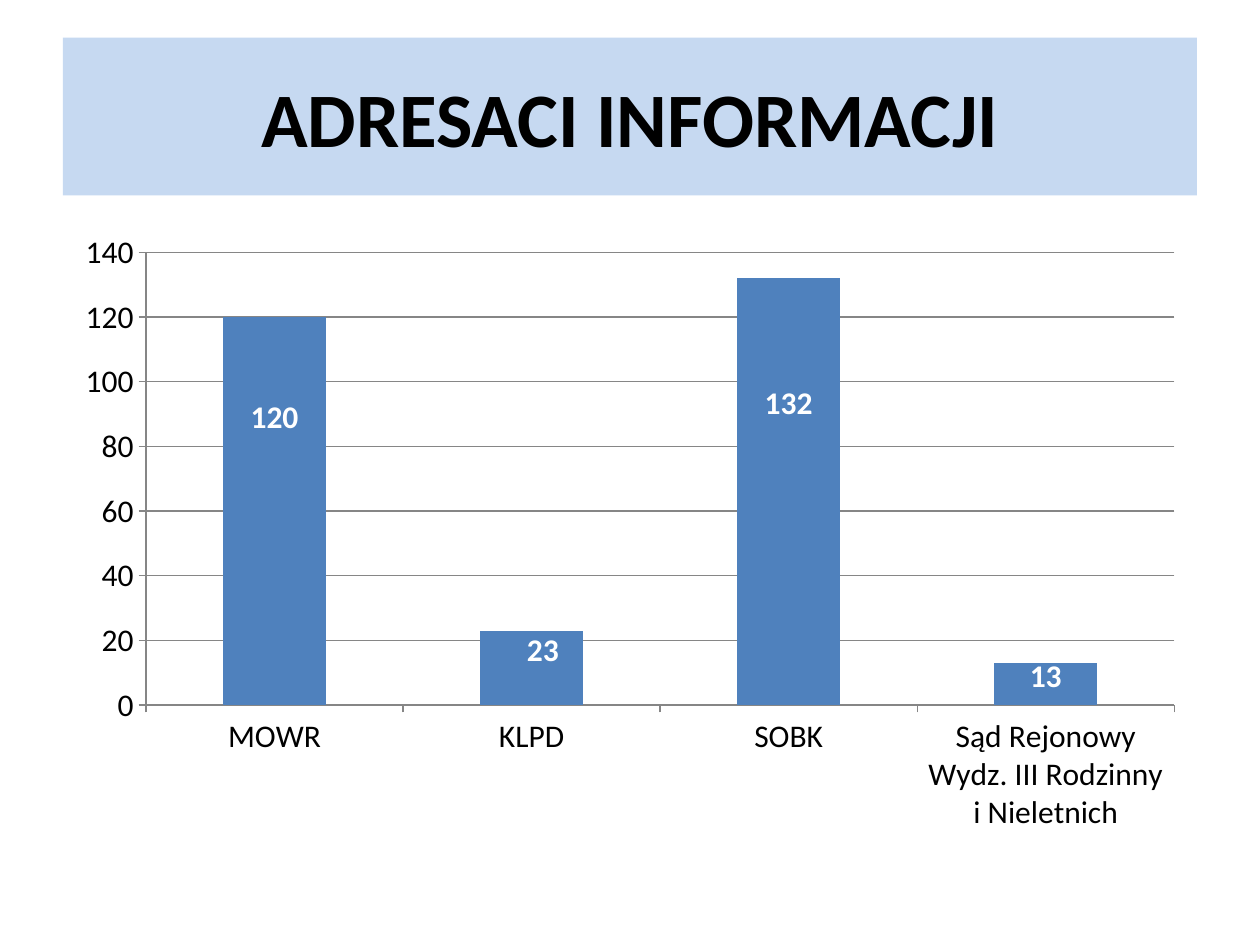
import pptx
import pptx.chart.data
import pptx.dml.color
import pptx.enum.chart
import pptx.enum.shapes
import pptx.enum.text
import pptx.oxml
import pptx.oxml.ns
import pptx.util
from pptx.util import Cm

RGBColor = pptx.dml.color.RGBColor
BLACK = RGBColor(0x00, 0x00, 0x00)
WHITE = RGBColor(0xFF, 0xFF, 0xFF)
PALE_BLUE = RGBColor(0xC6, 0xD9, 0xF1)
BLUE = RGBColor(0x4F, 0x81, 0xBD)
GREY = RGBColor(0x86, 0x86, 0x86)


class SlideBuilder:
    font = "Calibri"
    title_size = pptx.util.Pt(44)
    chart_size = pptx.util.Pt(18)
    left, width = Cm(1.27), Cm(22.86)

    def __init__(self, prs):
        self.s = prs.slides.add_slide(prs.slide_layouts[6])

    def style(self, font, size, color, bold):
        font.name, font.size, font.bold = self.font, size, bold
        font.color.rgb = color

    def title(self, text, top, height):
        sp = self.s.shapes.add_shape(
            pptx.enum.shapes.MSO_SHAPE.RECTANGLE, self.left, top, self.width, height
        )
        sp.shadow.inherit = False
        sp.fill.solid()
        sp.fill.fore_color.rgb = PALE_BLUE
        sp.line.fill.background()
        tf = sp.text_frame
        tf.vertical_anchor = pptx.enum.text.MSO_ANCHOR.MIDDLE
        p = tf.paragraphs[0]
        p.text = text
        p.alignment = pptx.enum.text.PP_ALIGN.CENTER
        self.style(p.font, self.title_size, BLACK, True)

    def column_chart(self, values, label_offsets, top, height):
        data = pptx.chart.data.CategoryChartData()
        data.categories = list(values)
        data.add_series("Series 1", list(values.values()))
        chart = self.s.shapes.add_chart(
            pptx.enum.chart.XL_CHART_TYPE.COLUMN_CLUSTERED,
            self.left, top, self.width, height, data,
        ).chart
        chart.has_title = chart.has_legend = False
        self.style(chart.font, self.chart_size, BLACK, False)

        for axis in (chart.category_axis, chart.value_axis):
            axis.format.line.color.rgb = GREY
            axis.major_tick_mark = pptx.enum.chart.XL_TICK_MARK.OUTSIDE
        axis = chart.value_axis
        axis.minimum_scale, axis.maximum_scale, axis.major_unit = 0, 140, 20
        axis.major_gridlines.format.line.color.rgb = GREY

        plot = chart.plots[0]
        plot.vary_by_categories = False
        plot.gap_width = 150
        series = plot.series[0]
        series.format.fill.solid()
        series.format.fill.fore_color.rgb = BLUE
        for i in range(len(values)):
            label = series.points[i].data_label
            self.style(label.font, self.chart_size, WHITE, True)
            label.position = pptx.enum.chart.XL_LABEL_POSITION.OUTSIDE_END
        self.place_labels(chart, label_offsets)

    def place_labels(self, chart, label_offsets):
        for label, (x, y) in zip(chart.element.xpath(".//c:dLbl"), label_offsets):
            label.insert(1, pptx.oxml.parse_xml(
                f'<c:layout {pptx.oxml.ns.nsdecls("c")}><c:manualLayout>'
                f'<c:x val="{x}"/><c:y val="{y}"/></c:manualLayout></c:layout>'
            ))
        for leader in chart.element.xpath(".//c:showLeaderLines"):
            leader.set("val", "0")


def main():
    prs = pptx.Presentation()
    prs.slide_width, prs.slide_height = Cm(25.4), Cm(19.05)
    b = SlideBuilder(prs)
    b.title("ADRESACI INFORMACJI", Cm(0.76), Cm(3.18))
    b.column_chart(
        {
            "MOWR": 120,
            "KLPD": 23,
            "SOBK": 132,
            "Sąd Rejonowy Wydz. III Rodzinny i Nieletnich": 13,
        },
        [(0, 0.2), (0.01, 0.07), (0, 0.24), (0, 0.06)],
        Cm(4.45), Cm(12.57),
    )
    prs.save("out.pptx")


if __name__ == "__main__":
    main()
